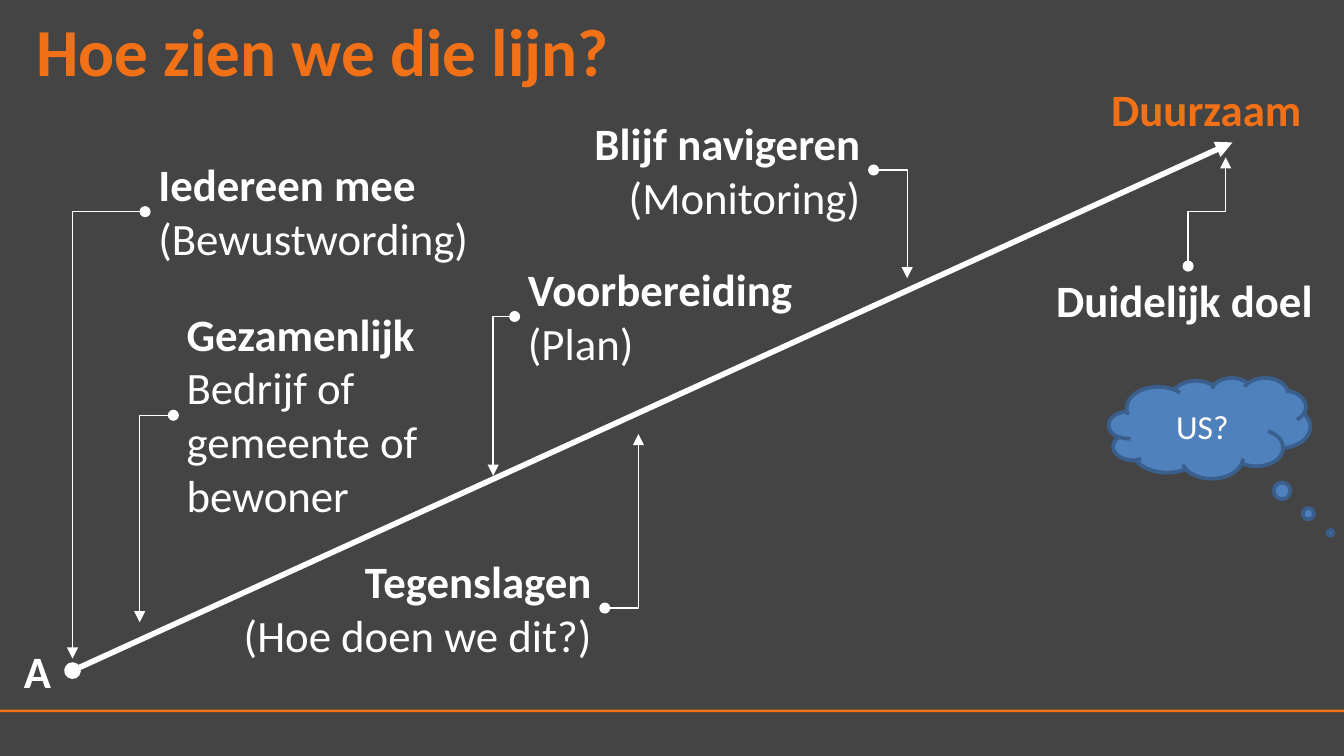
from lxml import etree
from pptx import Presentation, util as u
from pptx.dml.color import RGBColor
from pptx.enum import shapes, text
from pptx.oxml.ns import qn

# Content
COLORS = {"background": "444444", "accent": "F37116", "light": "FFFFFF",
          "cloud": "4F81BD", "cloud_edge": "3A5F8C"}
TITLE = "Hoe zien we die lijn?"
CLOUD_TEXT = "US?"

# End labels: text, box (left, top, width, height), colour
END_LABELS = [
    ("A", (0.08, 4.74, 0.46, 0.5), "light"),
    ("Duurzaam", (8.17, 0.56, 1.83, 0.5), "accent"),
    ("Duidelijk doel", (7.76, 1.98, 2.17, 0.5), "light"),
]
# Steps: lines (first one bold), box, side the arrow leaves from, arrow tip
STEPS = [
    (["Iedereen mee", "(Bewustwording)"], (1.08, 1.12, 2.58, 0.91), "left", (0.54, 4.9)),
    (["Gezamenlijk", "Bedrijf of gemeente of", "bewoner"],
     (1.29, 2.23, 2.17, 1.72), "left", (1.04, 4.63)),
    (["Voorbereiding", "(Plan)"], (3.83, 1.9, 2.33, 0.91), "left", (3.67, 3.54)),
    (["Tegenslagen", "(Hoe doen we dit?)"], (1.67, 4.07, 2.83, 0.91), "right", (4.75, 3.23)),
    (["Blijf navigeren", "(Monitoring)"], (3.83, 0.81, 2.67, 0.91), "right", (6.75, 2.07)),
]
GOAL, START = (9.17, 1.06), (0.54, 4.99)
GOAL_LABEL_TOP, GOAL_TIP = (8.84, 1.98), (9.12, 1.17)

# A 16:9 slide, 10 inches wide
presentation = Presentation()
presentation.slide_width = u.Inches(10)
presentation.slide_height = u.Inches(10 * 9 / 16)
slide = presentation.slides.add_slide(presentation.slide_layouts[6])


def color(name):
    return RGBColor.from_string(COLORS[name])


def inches(values):
    return [u.Inches(value) for value in values]


def style_font(paragraph, size, color_name, bold=False):
    font = paragraph.font
    font.name, font.size, font.bold = "Calibri", u.Pt(size), bold
    font.color.rgb = color(color_name)


def add_text(lines, box, color_name="light", size=24, align="LEFT", anchor="TOP"):
    frame = slide.shapes.add_textbox(*inches(box)).text_frame
    frame.word_wrap = True
    frame.vertical_anchor = getattr(text.MSO_ANCHOR, anchor)
    for index, line in enumerate(lines):
        paragraph = frame.add_paragraph() if index else frame.paragraphs[0]
        paragraph.text = line
        paragraph.alignment = getattr(text.PP_ALIGN, align)
        style_font(paragraph, size, color_name, bold=index == 0)


def add_arrow(kind, begin, end, width, head, tail, preset=None):
    connector = slide.shapes.add_connector(kind, *inches(begin + end))
    connector.line.color.rgb = color("light")
    connector.line.width = u.Pt(width)
    properties = connector._element.spPr
    if preset:
        properties.find(qn("a:prstGeom")).set("prst", preset)
    line = properties.find(qn("a:ln"))
    etree.SubElement(line, qn("a:headEnd"), type=head)
    etree.SubElement(line, qn("a:tailEnd"), type=tail)
    etree.SubElement(properties, qn("a:effectLst"))
    return connector


def add_filled(preset, box, fill):
    shape = slide.shapes.add_shape(preset, *inches(box))
    shape.shadow.inherit = False
    shape.fill.solid()
    shape.fill.fore_color.rgb = color(fill)
    return shape


# Background, footer rule and title
slide.background.fill.solid()
slide.background.fill.fore_color.rgb = color("background")
rule = add_filled(shapes.MSO_SHAPE.RECTANGLE, (0, 5.28, 10, 0.02), "accent")
rule.line.fill.background()
add_text([TITLE], (0.17, -0.1, 9.67, 0.94), "accent", size=36, anchor="MIDDLE")

# Main line from start to goal
straight, elbow = shapes.MSO_CONNECTOR.STRAIGHT, shapes.MSO_CONNECTOR.ELBOW
add_arrow(straight, GOAL, START, 3, "triangle", "oval")
for label, box, color_name in END_LABELS:
    add_text([label], box, color_name)

# Steps, each with an arrow from the middle of its side
for lines, box, side, tip in STEPS:
    left, top, width, height = box
    add_text(lines, box, align="RIGHT" if side == "right" else "LEFT")
    begin = (left + width if side == "right" else left, top + height / 2)
    add_arrow(elbow, begin, tip, 0.75, "oval", "triangle", "bentConnector2")

# Goal arrow leaves upwards: an elbow turned a quarter about its centre
center_x, center_y = [(a + b) / 2 for a, b in zip(GOAL_LABEL_TOP, GOAL_TIP)]
half_run = (GOAL_LABEL_TOP[1] - GOAL_TIP[1]) / 2
half_rise = (GOAL_TIP[0] - GOAL_LABEL_TOP[0]) / 2
goal_arrow = add_arrow(elbow, (center_x - half_run, center_y - half_rise),
                       (center_x + half_run, center_y + half_rise),
                       0.75, "oval", "triangle")
goal_arrow._element.spPr.find(qn("a:xfrm")).set("rot", str(270 * 60000))

# Thought cloud
cloud = add_filled(shapes.MSO_SHAPE.CLOUD_CALLOUT, (8.25, 2.81, 1.5, 0.75), "cloud")
cloud.adjustments[0], cloud.adjustments[1] = 0.6, 1.04
cloud.line.color.rgb = color("cloud_edge")
cloud.line.width = u.Pt(2)
cloud.text_frame.vertical_anchor = text.MSO_ANCHOR.MIDDLE
caption = cloud.text_frame.paragraphs[0]
caption.text = CLOUD_TEXT
caption.alignment = text.PP_ALIGN.CENTER
style_font(caption, 18, "light")

presentation.save("out.pptx")
